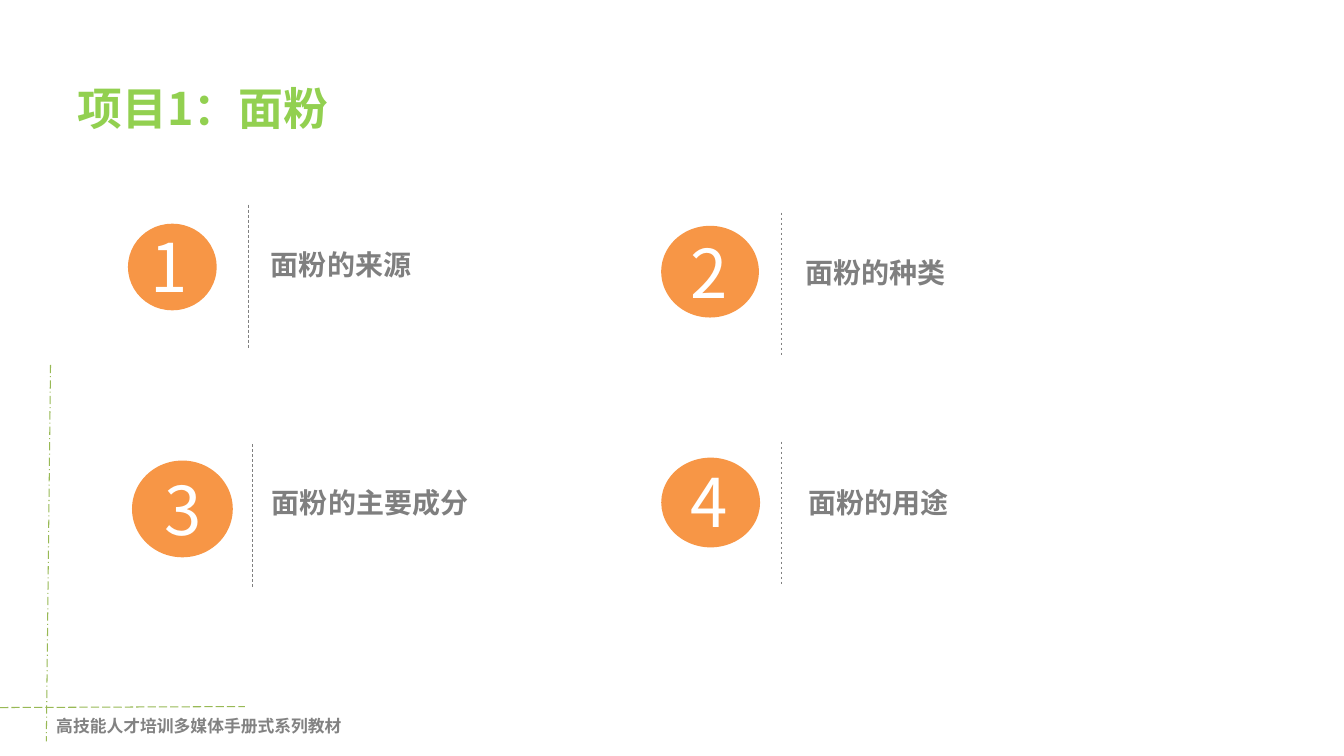
from dataclasses import dataclass

from pptx import Presentation
from pptx.dml.color import RGBColor
from pptx.enum.dml import MSO_LINE_DASH_STYLE as Dash
from pptx.enum.shapes import MSO_CONNECTOR as Connector, MSO_SHAPE as Shape
from pptx.enum.text import MSO_ANCHOR as Anchor, MSO_AUTO_SIZE as AutoSize, PP_ALIGN as Align
from pptx.oxml.ns import qn
from pptx.util import Pt

SANS = "Noto Sans CJK SC"
SERIF = "Times New Roman"
DIVIDER_OFFSET = 85.8
DIVIDER_HEIGHT = 102.8


@dataclass
class Topic:
    """Box corner in points; circle_top, number and label are relative to it."""
    number: str
    title: str
    corner: tuple
    circle_size: tuple
    circle_top: float
    number_at: tuple
    label_at: tuple


TOPICS = [
    Topic("1", "面粉的来源", (91.4, 146.2), (63.4, 61.9), 13.6, (8.7, 11.5), (95.1, 27.3)),
    Topic("2", "面粉的种类", (472.3, 151.9), (69.8, 65.5), 9.4, (13.7, 10.1), (95.8, 27.4)),
    Topic("3", "面粉的主要成分", (94.3, 317.5), (72, 69.1), 11.5, (15.9, 13.7), (92.9, 25.9)),
    Topic("4", "面粉的用途", (472.3, 315.4), (70.6, 64.1), 11.5, (13.7, 10), (97.9, 28)),
]


def color(value):
    return RGBColor.from_string(value)


def write(frame, text, size, tint, bold=False, font=SANS):
    frame.auto_size = AutoSize.NONE
    para = frame.paragraphs[0]
    para.alignment = Align.LEFT
    span = para.add_run()
    span.text = text
    span.font.size = Pt(size)
    span.font.bold = bold
    span.font.name = font
    span.font.color.rgb = color(tint)
    east_asian = span.font._element.makeelement(qn("a:ea"), {"typeface": SANS})
    span.font._element.find(qn("a:latin")).addnext(east_asian)


def add_text(page, box, text, size, tint, bold=False, font=SANS, wrap=True):
    frame = page.shapes.add_textbox(*map(Pt, box)).text_frame
    frame.word_wrap = wrap
    write(frame, text, size, tint, bold, font)


def add_line(page, start, end, tint, width, dash):
    line = page.shapes.add_connector(Connector.STRAIGHT, *map(Pt, (*start, *end)))
    line.line.color.rgb = color(tint)
    line.line.width = Pt(width)
    line.line.dash_style = dash
    properties = line._element.spPr
    properties.append(properties.makeelement(qn("a:effectLst"), {}))


def add_corner_footer(page, left, top):
    add_line(page, (left + 3, top - 247), (left, top + 22), "98B955", 0.75, Dash.LONG_DASH_DOT)
    add_line(page, (0, top - 2.2), (175, top - 2.9), "98B955", 0.75, Dash.LONG_DASH)
    add_text(page, (left, top, 220.3, 21.6), "高技能人才培训多媒体手册式系列教材",
             12, "828282", True, SERIF, wrap=False)


def add_title(page, box):
    title = page.shapes.title
    title.left, title.top, title.width, title.height = map(Pt, box)
    title.text_frame.vertical_anchor = Anchor.MIDDLE
    write(title.text_frame, "项目1：面粉", 32, "92D050", True)


def add_topic(page, topic):
    left, top = topic.corner
    divider = left + DIVIDER_OFFSET
    add_line(page, (divider, top), (divider, top + DIVIDER_HEIGHT), "808080", 0.5, Dash.DASH)

    circle = page.shapes.add_shape(
        Shape.OVAL, *map(Pt, (left, top + topic.circle_top, *topic.circle_size)))
    circle.shadow.inherit = False
    circle.fill.solid()
    circle.fill.fore_color.rgb = color("F79646")
    circle.line.fill.background()

    x, y = topic.number_at
    add_text(page, (left + x, top + y, 52.6, 65.5), topic.number, 48, "FFFFFF")
    x, y = topic.label_at
    add_text(page, (left + x, top + y, 244.8, 31.7), topic.title, 20, "7F7F7F", True)


def main():
    deck = Presentation()
    deck.slide_width, deck.slide_height = Pt(960), Pt(540)
    page = deck.slides.add_slide(deck.slide_layouts[5])
    add_corner_footer(page, 33.1, 507.6)
    add_title(page, (48.2, 39.6, 352.8, 74.2))
    for topic in TOPICS:
        add_topic(page, topic)
    deck.save("out.pptx")


if __name__ == "__main__":
    main()
